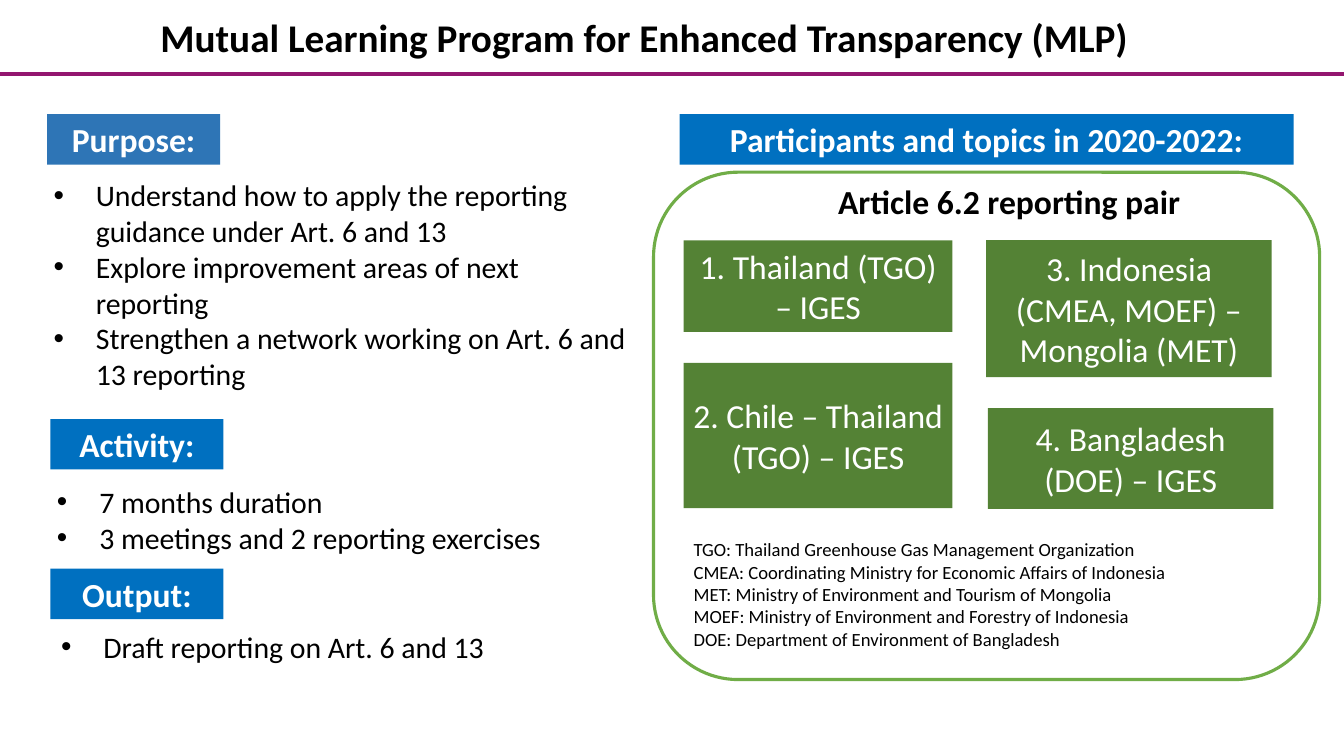
"""Build the slide on the Mutual Learning Program for Enhanced Transparency."""
from dataclasses import dataclass

from lxml import etree
from pptx import Presentation
from pptx.dml.color import RGBColor
from pptx.enum.shapes import MSO_CONNECTOR, MSO_SHAPE
from pptx.enum.text import MSO_ANCHOR, MSO_AUTO_SIZE, PP_ALIGN
from pptx.oxml.ns import qn
from pptx.util import Inches, Pt

RECTANGLE, ROUNDED = MSO_SHAPE.RECTANGLE, MSO_SHAPE.ROUNDED_RECTANGLE
STRAIGHT = MSO_CONNECTOR.STRAIGHT
TOP, MIDDLE = MSO_ANCHOR.TOP, MSO_ANCHOR.MIDDLE
LEFT, CENTER = PP_ALIGN.LEFT, PP_ALIGN.CENTER
NO_FIT = MSO_AUTO_SIZE.NONE


@dataclass(frozen=True)
class Theme:
    font: str = "Calibri"
    black: RGBColor = RGBColor(0x00, 0x00, 0x00)
    white: RGBColor = RGBColor(0xFF, 0xFF, 0xFF)
    rule: RGBColor = RGBColor(0x93, 0x16, 0x6F)
    steel: RGBColor = RGBColor(0x2E, 0x75, 0xB6)
    blue: RGBColor = RGBColor(0x00, 0x70, 0xC0)
    green: RGBColor = RGBColor(0x54, 0x82, 0x35)
    frame: RGBColor = RGBColor(0x70, 0xAD, 0x47)
    title: float = 28
    heading: float = 24
    body: float = 21.3
    note: float = 13.3


theme = Theme()
prs = Presentation()
prs.slide_width, prs.slide_height = Inches(13.33), Inches(7.5)
COL, ROW = prs.slide_width / 160, prs.slide_height / 90
slide = prs.slides.add_slide(prs.slide_layouts[5])
shapes = slide.shapes


def cells(left, top, width, height):
    return int(left * COL), int(top * ROW), int(width * COL), int(height * ROW)


def write(holder, lines, size, color, bold=False, align=LEFT, anchor=TOP, wrap=True, bullets=False):
    frame = holder.text_frame
    frame.text = "\n".join(lines)
    frame.word_wrap, frame.auto_size, frame.vertical_anchor = wrap, NO_FIT, anchor
    for paragraph in frame.paragraphs:
        paragraph.alignment = align
        if bullets:
            props = paragraph._p.get_or_add_pPr()
            props.set("marL", str(Inches(0.42)))
            props.set("indent", str(-Inches(0.42)))
            etree.SubElement(props, qn("a:buFont")).set("typeface", "Arial")
            etree.SubElement(props, qn("a:buChar")).set("char", "•")
        for run in paragraph.runs:
            run.font.name, run.font.size = theme.font, Pt(size)
            run.font.bold, run.font.color.rgb = bold, color


title = shapes.title
title.left, title.top, title.width, title.height = cells(17.2, 1, 118.9, 6.8)
write(title, ["Mutual Learning Program for Enhanced Transparency (MLP)"],
      theme.title, theme.black, True, CENTER, MIDDLE, wrap=False)

title_rule = shapes.add_connector(STRAIGHT, 0, int(8.8 * ROW), prs.slide_width, int(8.8 * ROW))
title_rule.line.color.rgb, title_rule.line.width = theme.rule, Pt(3)
etree.SubElement(title_rule._element.spPr, qn("a:effectLst"))

pairs_frame = shapes.add_shape(ROUNDED, *cells(77.8, 20.5, 79.3, 60.4))
pairs_frame.shadow.inherit = False
pairs_frame.fill.background()
pairs_frame.line.color.rgb, pairs_frame.line.width = theme.frame, Pt(2.25)

panels = [
    ("Purpose:", (5.6, 13.6, 20.6, 6), theme.steel, True),
    ("Activity:", (6, 49.9, 20.6, 6), theme.blue, True),
    ("Output:", (6, 67.7, 20.6, 6), theme.blue, True),
    ("Participants and topics in 2020-2022:", (80.9, 13.6, 73.1, 6), theme.blue, True),
    ("1. Thailand (TGO) – IGES", (81.4, 28.6, 32, 10.9), theme.green, False),
    ("2. Chile – Thailand (TGO) – IGES", (81.4, 43.2, 32, 17.3), theme.green, False),
    ("3. Indonesia (CMEA, MOEF) – Mongolia (MET)", (117.4, 28.6, 34, 16.3), theme.green, False),
    ("4. Bangladesh (DOE) – IGES", (117.6, 48.6, 34, 12), theme.green, False),
]
for label, area, fill, bold in panels:
    panel = shapes.add_shape(RECTANGLE, *cells(*area))
    panel.shadow.inherit = False
    panel.fill.solid()
    panel.fill.fore_color.rgb = fill
    panel.line.fill.background()
    panel.text_frame.margin_left = panel.text_frame.margin_right = Inches(0.08)
    write(panel, [label], theme.heading, theme.white, bold, CENTER, MIDDLE)

details = [
    ((5.2, 20.5, 70.6, 27), ["Understand how to apply the reporting guidance under Art. 6 and 13",
                             "Explore improvement areas of next reporting",
                             "Strengthen a network working on Art. 6 and 13 reporting"]),
    ((5.6, 57, 70.6, 9.8), ["7 months duration", "3 meetings and 2 reporting exercises"]),
    ((6.1, 74.2, 70.6, 5.5), ["Draft reporting on Art. 6 and 13"]),
]
for area, points in details:
    write(shapes.add_textbox(*cells(*area)), points, theme.body, theme.black, bullets=True)

write(shapes.add_textbox(*cells(98.6, 21, 44.4, 6)), ["Article 6.2 reporting pair"],
      theme.heading, theme.black, True, wrap=False)

abbreviations = [
    "TGO: Thailand Greenhouse Gas Management Organization",
    "CMEA: Coordinating Ministry for Economic Affairs of Indonesia",
    "MET: Ministry of Environment and Tourism of Mongolia",
    "MOEF: Ministry of Environment and Forestry of Indonesia",
    "DOE: Department of Environment of Bangladesh",
]
write(shapes.add_textbox(*cells(81.4, 63.5, 73.4, 14.6)), abbreviations, theme.note, theme.black)

prs.save("out.pptx")
